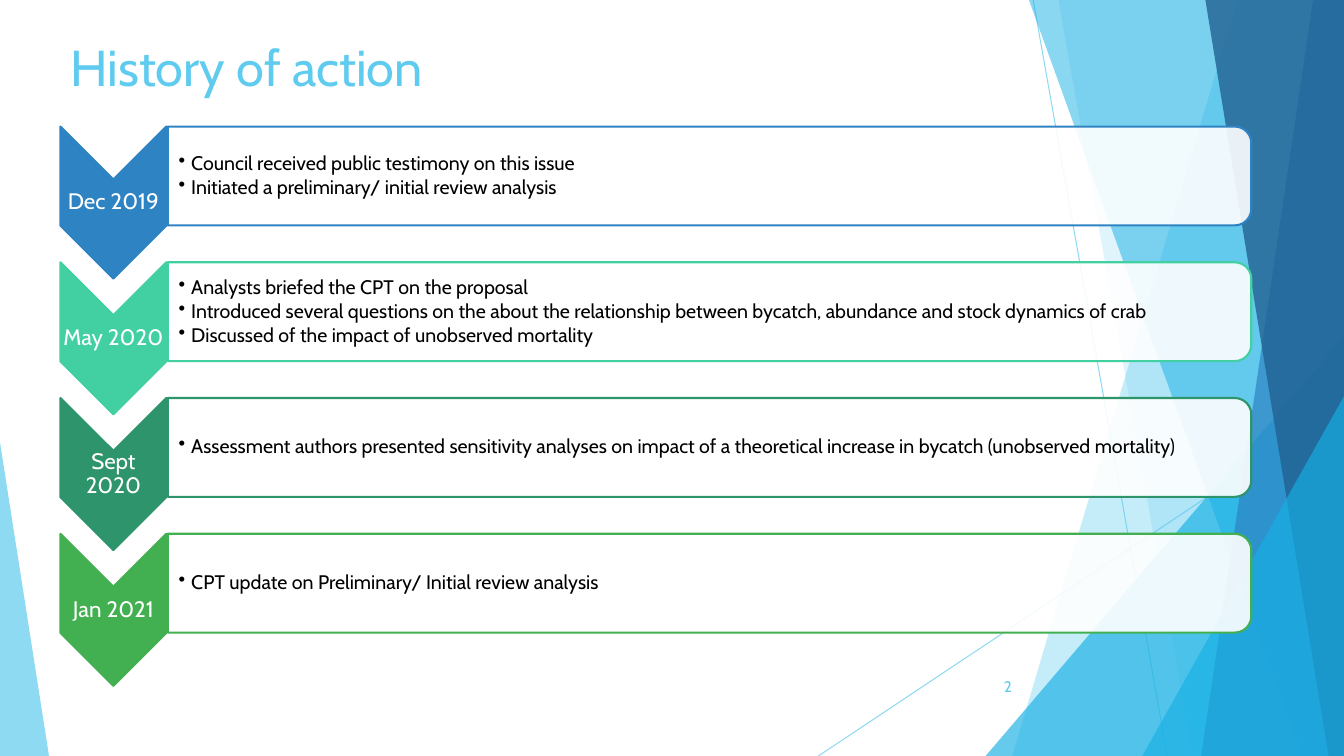
import pptx
import pptx.dml.color
import pptx.enum.shapes
import pptx.enum.text
import pptx.oxml
import pptx.oxml.ns
import pptx.util

Pt = pptx.util.Pt
SHAPE = pptx.enum.shapes.MSO_SHAPE
ALIGN = pptx.enum.text.PP_ALIGN
ANCHOR = pptx.enum.text.MSO_ANCHOR

TITLE = "History of action"
PAGE = "2"
STEPS = [
    ("Dec 2019", "2E83C3", [
        "Council received public testimony on this issue",
        "Initiated a preliminary/ initial review analysis",
    ]),
    ("May 2020", "42D0A2", [
        "Analysts briefed the CPT on the proposal",
        "Introduced several questions on the about the relationship between bycatch, "
        "abundance and stock dynamics of crab",
        "Discussed of the impact of unobserved mortality",
    ]),
    ("Sept 2020", "2E946B", [
        "Assessment authors presented sensitivity analyses on impact of a theoretical "
        "increase in bycatch (unobserved mortality)",
    ]),
    ("Jan 2021", "42B051", ["CPT update on Preliminary/ Initial review analysis"]),
]


class Theme:
    font = "Cabin"
    sky, azure, blue, navy = "5FCBEF", "17B0E4", "2E83C3", "226292"
    white, black = "FFFFFF", "000000"
    title_size, label_size, body_size, page_size = 36, 16, 14, 11


W, H = 960, 540
RAYS = [((738, 0), (833.8, H)), ((W, 290), (584.6, H))]
FACETS = [
    ([(884, 0), (W, 0), (W, H), (723, H)], Theme.sky, 36),
    ([(756, 0), (W, 0), (W, H), (851.5, H)], Theme.sky, 20),
    ([(W, 240), (W, H), (703.5, H)], Theme.azure, 66),
    ([(735.3, 0), (W, 0), (W, H), (929.5, H)], Theme.azure, 50),
    ([(938, 0), (W, 0), (W, H), (858.5, H)], Theme.blue, 70),
    ([(861.2, 0), (W, 0), (W, H), (949, H)], Theme.navy, 80),
    ([(W, 283), (W, H), (816.5, H)], Theme.azure, 66),
    ([(0, 316), (35.3, H), (0, H)], Theme.sky, 70),
]

LEFT, TOP, PITCH = 43.2, 90.4, 96.95
CHEVRON_W, CHEVRON_H = 75.6, 108.6
BAR_X, BAR_W, BAR_H = 119.8, 774, 70.6
LABEL_H, BODY_W, BODY_H = 32.4, 771, 63.4


def rgb(color):
    return pptx.dml.color.RGBColor.from_string(color)


def set_alpha(fill_parent, percent):
    clr = next(fill_parent.iter(pptx.oxml.ns.qn("a:srgbClr")))
    clr.append(pptx.oxml.parse_xml(
        f'<a:alpha {pptx.oxml.ns.nsdecls("a")} val="{percent * 1000}"/>'))


def paint(sp, fill, alpha=100, line=None):
    sp.shadow.inherit = False
    sp.fill.solid()
    sp.fill.fore_color.rgb = rgb(fill)
    if alpha < 100:
        set_alpha(sp._element.spPr, alpha)
    if line:
        sp.line.color.rgb = rgb(line)
        sp.line.width = Pt(1.5)
    else:
        sp.line.fill.background()


def write(sp, lines, size, color, align=ALIGN.LEFT, anchor=ANCHOR.MIDDLE,
          insets=None, bullet=False, spacing=None, after=0):
    tf = sp.text_frame
    tf.word_wrap = True
    tf.auto_size = pptx.enum.text.MSO_AUTO_SIZE.NONE
    tf.vertical_anchor = anchor
    if insets:
        tf.margin_left, tf.margin_top, tf.margin_right, tf.margin_bottom = map(Pt, insets)
    for i, line in enumerate(lines):
        p = tf.add_paragraph() if i else tf.paragraphs[0]
        if bullet:
            pPr = p._p.get_or_add_pPr()
            pPr.set("marL", str(Pt(9)))
            pPr.set("indent", str(-Pt(9)))
            pPr.append(pptx.oxml.parse_xml(
                f'<a:buChar {pptx.oxml.ns.nsdecls("a")} char="•"/>'))
        p.alignment = align
        p.space_after = Pt(after)
        if spacing:
            p.line_spacing = spacing
        r = p.add_run()
        r.text = line
        r.font.name = Theme.font
        r.font.size = Pt(size)
        r.font.color.rgb = rgb(color)


def add_box(s, x, y, w, h):
    return s.shapes.add_textbox(Pt(x), Pt(y), Pt(w), Pt(h))


def add_quarter_turned(s, kind, x, y, w, h):
    sp = s.shapes.add_shape(kind, Pt(x + (w - h) / 2), Pt(y + (h - w) / 2), Pt(h), Pt(w))
    sp.rotation = 90
    return sp


def add_backdrop(s):
    for start, end in RAYS:
        ray = s.shapes.add_connector(
            pptx.enum.shapes.MSO_CONNECTOR.STRAIGHT, *map(Pt, start + end))
        ray.line.color.rgb = rgb(Theme.sky)
        ray.line.width = Pt(0.75)
        set_alpha(ray._element.spPr, 70)
        ray._element.spPr.append(pptx.oxml.parse_xml(
            f'<a:effectLst {pptx.oxml.ns.nsdecls("a")}/>'))
    for points, color, alpha in FACETS:
        outline = s.shapes.build_freeform(*points[0], scale=Pt(1))
        outline.add_line_segments(points[1:])
        paint(outline.convert_to_shape(), color, alpha)


def add_step(s, y, date, color, actions):
    chevron = add_quarter_turned(s, SHAPE.CHEVRON, LEFT, y, CHEVRON_W, CHEVRON_H)
    paint(chevron, color, line=color)
    label = add_box(s, LEFT, y + (CHEVRON_H - LABEL_H) / 2, CHEVRON_W, LABEL_H)
    write(label, [date], Theme.label_size, Theme.white, align=ALIGN.CENTER,
          insets=(0.8, 0.8, 0.8, 0.8), spacing=0.9)
    bar = add_quarter_turned(s, SHAPE.ROUND_2_SAME_RECTANGLE, BAR_X, y, BAR_W, BAR_H)
    paint(bar, Theme.white, 90, line=color)
    body = add_box(s, BAR_X, y + (BAR_H - BODY_H) / 2, BODY_W, BODY_H)
    write(body, actions, Theme.body_size, Theme.black, insets=(7.8, 0.8, 0.8, 0.8),
          bullet=True, spacing=0.9, after=2)


def main():
    prs = pptx.Presentation()
    prs.slide_width, prs.slide_height = Pt(W), Pt(H)
    s = prs.slides.add_slide(prs.slide_layouts[5])
    add_backdrop(s)
    title = s.shapes.title
    title.left, title.top, title.width, title.height = map(Pt, (43.2, 22.3, 677, 103.7))
    write(title, [TITLE], Theme.title_size, Theme.sky, anchor=ANCHOR.TOP)
    page = add_box(s, 676, 476, 54, 28.8)
    write(page, [PAGE], Theme.page_size, Theme.sky, align=ALIGN.RIGHT)
    for i, step in enumerate(STEPS):
        add_step(s, TOP + i * PITCH, *step)
    prs.save("out.pptx")


if __name__ == "__main__":
    main()
